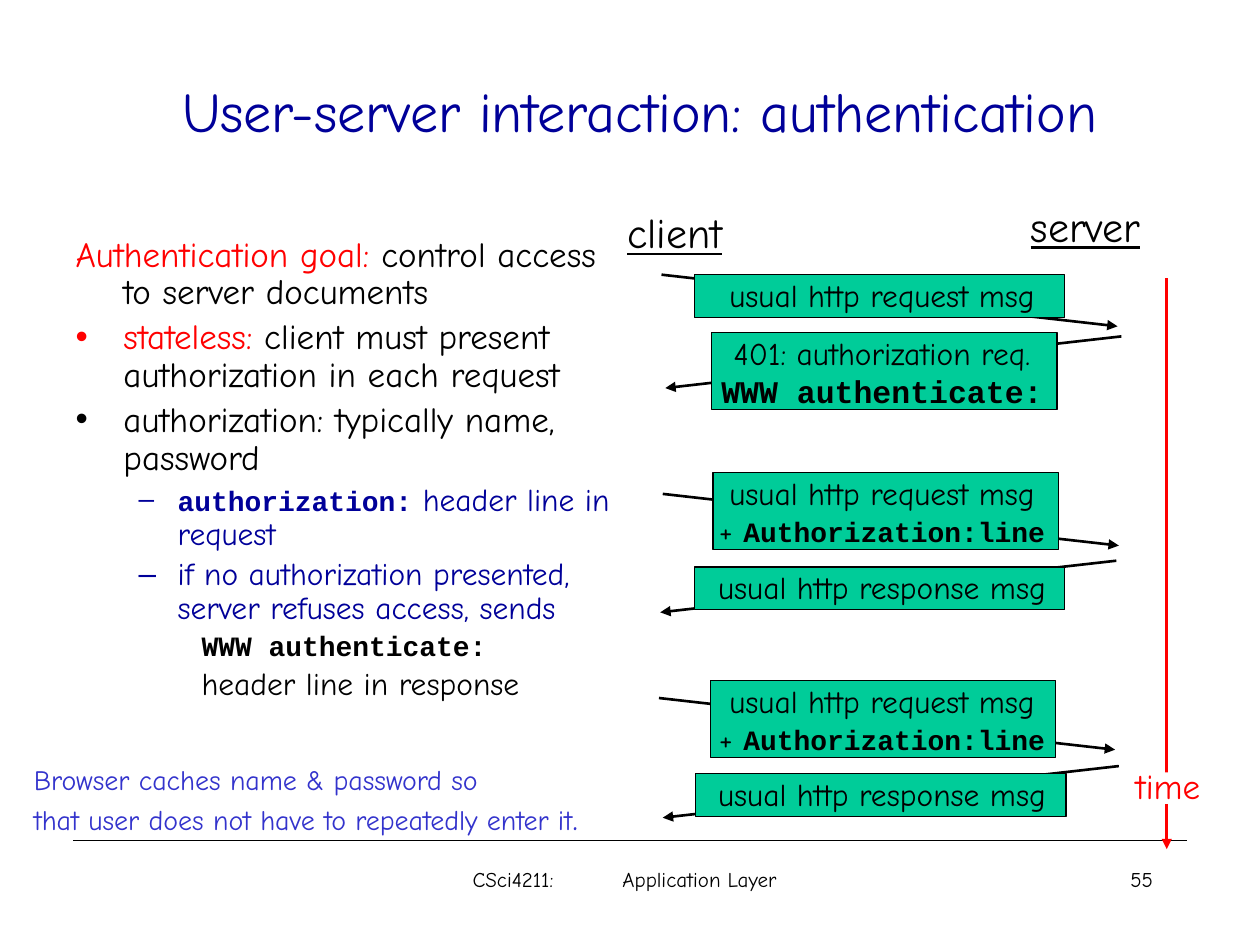
from lxml import etree
from pptx import Presentation
from pptx.dml.color import RGBColor
from pptx.enum.shapes import MSO_CONNECTOR, MSO_SHAPE
from pptx.enum.text import MSO_ANCHOR, MSO_AUTO_SIZE, PP_ALIGN
from pptx.oxml.ns import qn
from pptx.util import Inches, Pt

BLACK = RGBColor(0x00, 0x00, 0x00)
WHITE = RGBColor(0xFF, 0xFF, 0xFF)
RED = RGBColor(0xFF, 0x00, 0x00)
NAVY = RGBColor(0x00, 0x00, 0x99)
BLUE = RGBColor(0x33, 0x33, 0xCC)
GREEN = RGBColor(0x00, 0xCC, 0x99)
SANS, MONO = "Comic Neue", "Courier New"

# A run is (text, size, colour, is code).
TITLE = "User-server interaction: authentication"
BODY = [  # level, bullet, runs
    (0, None, [("Authentication goal:", 20, RED, False),
               (" control access to server documents", 20, BLACK, False)]),
    (0, "•", [("stateless:", 20, RED, False),
              (" client must present authorization in each request", 20, BLACK, False)]),
    (0, "•", [("authorization: typically name, password", 20, BLACK, False)]),
    (1, "–", [("authorization:", 16, NAVY, True),
              (" header line in request", 18, NAVY, False)]),
    (1, "–", [("if no authorization presented, server refuses access, sends",
               18, NAVY, False)]),
    (2, None, [("WWW authenticate:", 16, BLACK, True)]),
    (2, None, [("header line in response", 18, BLACK, False)]),
]
INDENTS = [(0.38, -0.38), (0.81, -0.31), (1.25, -0.25)]
CACHING = [
    [("Browser caches name & password so", 16, BLUE, False)],
    [("that user does not have to repeatedly enter it", 16, BLUE, False),
     (".", 20, BLUE, False)],
]

REQUEST = [("usual http request msg", 18, BLACK, False)]
RESPONSE = [("usual http response msg", 18, BLACK, False)]
CREDENTIALS = [("+ ", 18, BLACK, False), ("Authorization:line", 16, BLACK, True)]
CHALLENGE = [[("401: authorization req.", 18, BLACK, False)],
             [("WWW authenticate:", 18, BLACK, True)]]
MESSAGES = [  # arrow start x, arrow start y, box centre, box top, lines
    (5.25, 2.18, 6.98, 2.18, [REQUEST]),
    (8.90, 2.67, 7.02, 2.64, CHALLENGE),
    (5.26, 3.92, 7.03, 3.75, [REQUEST, CREDENTIALS]),
    (8.86, 4.45, 6.98, 4.50, [RESPONSE]),
    (5.23, 5.54, 7.01, 5.40, [REQUEST, CREDENTIALS]),
    (8.88, 6.08, 6.99, 6.14, [RESPONSE]),
]
ARROW_RUN, ARROW_DROP = 3.62, 0.41
BOX_SIZES = {1: (2.94, 0.34), 2: (2.74, 0.61)}  # by number of lines
LABEL_W, LABEL_CENTRE = 3.03, 7.0


def place(sp, x, y, w, h):
    sp.left, sp.top, sp.width, sp.height = map(Inches, (x, y, w, h))


def add_runs(p, runs):
    for text, size, color, code in runs:
        r = p.add_run()
        r.text = text
        r.font.name = MONO if code else SANS
        r.font.size = Pt(size)
        r.font.bold = code
        r.font.color.rgb = color


def fill_paragraphs(tf, lines, align):
    for i, runs in enumerate(lines):
        p = tf.paragraphs[0] if i == 0 else tf.add_paragraph()
        p.alignment = align
        add_runs(p, runs)


def add_text(s, x, y, w, h, lines, align=PP_ALIGN.CENTER):
    tf = s.shapes.add_textbox(*map(Inches, (x, y, w, h))).text_frame
    tf.word_wrap = True
    fill_paragraphs(tf, lines, align)
    return tf


def add_line(s, x1, y1, x2, y2, color=BLACK, width=1.5, arrow=True):
    line = s.shapes.add_connector(MSO_CONNECTOR.STRAIGHT,
                                  *map(Inches, (x1, y1, x2, y2)))
    line.line.color.rgb = color
    line.line.width = Pt(width)
    if arrow:
        etree.SubElement(line.line._get_or_add_ln(), qn("a:tailEnd"), type="triangle")
    etree.SubElement(line._element.spPr, qn("a:effectLst"))


def add_box(s, x, y, w, h, fill, outlined=True):
    sp = s.shapes.add_shape(MSO_SHAPE.RECTANGLE, *map(Inches, (x, y, w, h)))
    sp.shadow.inherit = False
    sp.fill.solid()
    sp.fill.fore_color.rgb = fill
    if outlined:
        sp.line.color.rgb = BLACK
        sp.line.width = Pt(0.75)
    else:
        sp.line.fill.background()


def set_bullet(p, level, bullet):
    pPr = p._p.get_or_add_pPr()
    margin, indent = INDENTS[level]
    pPr.set("marL", str(Inches(margin)))
    pPr.set("indent", str(Inches(indent)))
    if bullet:
        etree.SubElement(pPr, qn("a:buChar"), char=bullet)
    else:
        etree.SubElement(pPr, qn("a:buNone"))


def add_title_and_body(s):
    title, body = s.placeholders
    place(title, 0.83, 0.25, 8.5, 1.25)
    tf = title.text_frame
    tf.vertical_anchor = MSO_ANCHOR.MIDDLE
    tf.auto_size = MSO_AUTO_SIZE.NONE
    fill_paragraphs(tf, [[(TITLE, 32, NAVY, False)]], PP_ALIGN.CENTER)

    place(body, 0.5, 1.83, 4.47, 4.17)
    tf = body.text_frame
    tf.auto_size = MSO_AUTO_SIZE.NONE
    fill_paragraphs(tf, [runs for _, _, runs in BODY], PP_ALIGN.LEFT)
    for p, (level, bullet, _) in zip(tf.paragraphs, BODY):
        p.level = level
        p.line_spacing = 0.9
        set_bullet(p, level, bullet)


def add_footer(s):
    add_line(s, 0.58, 6.67, 9.42, 6.67, width=0.75, arrow=False)
    tf = add_text(s, 3.33, 6.83, 3.25, 0.5,
                  [[("CSci4211:\tApplication Layer", 12, BLACK, False)]], PP_ALIGN.LEFT)
    tf.margin_left = Inches(0.42)
    tabs = etree.SubElement(tf.paragraphs[0]._p.get_or_add_pPr(), qn("a:tabLst"))
    etree.SubElement(tabs, qn("a:tab"), pos=str(Inches(1.19)), algn="l")
    add_text(s, 7.17, 6.83, 2.08, 0.5, [[("55", 12, BLACK, False)]], PP_ALIGN.RIGHT)


def add_messages(s):
    for i, (x, y, centre, top, lines) in enumerate(MESSAGES):
        run = ARROW_RUN if i % 2 == 0 else -ARROW_RUN
        add_line(s, x, y, x + run, y + ARROW_DROP)
        w, h = BOX_SIZES[len(lines)]
        add_box(s, centre - w / 2, top, w, h, GREEN)
        add_text(s, LABEL_CENTRE - LABEL_W / 2, top - 0.04, LABEL_W, h + 0.08, lines)


def add_timeline(s):
    for name, x, y, w in (("client", 4.82, 1.59, 1.07), ("server", 8.01, 1.54, 1.21)):
        tf = add_text(s, x, y, w, 0.5, [[(name, 24, BLACK, False)]])
        tf.paragraphs[0].runs[0].font.underline = True
    add_messages(s)
    add_line(s, 9.26, 2.21, 9.26, 6.74, RED)
    add_box(s, 8.97, 6.13, 0.62, 0.25, WHITE, outlined=False)
    add_text(s, 8.88, 6.02, 0.78, 0.43, [[("time", 20, RED, False)]])


def main():
    prs = Presentation()
    prs.slide_width, prs.slide_height = Inches(10), Inches(7.5)
    s = prs.slides.add_slide(prs.slide_layouts[1])
    add_title_and_body(s)
    add_footer(s)
    add_timeline(s)
    add_text(s, 0.17, 6, 5.06, 0.7, CACHING, PP_ALIGN.LEFT)
    prs.save("out.pptx")


if __name__ == "__main__":
    main()
